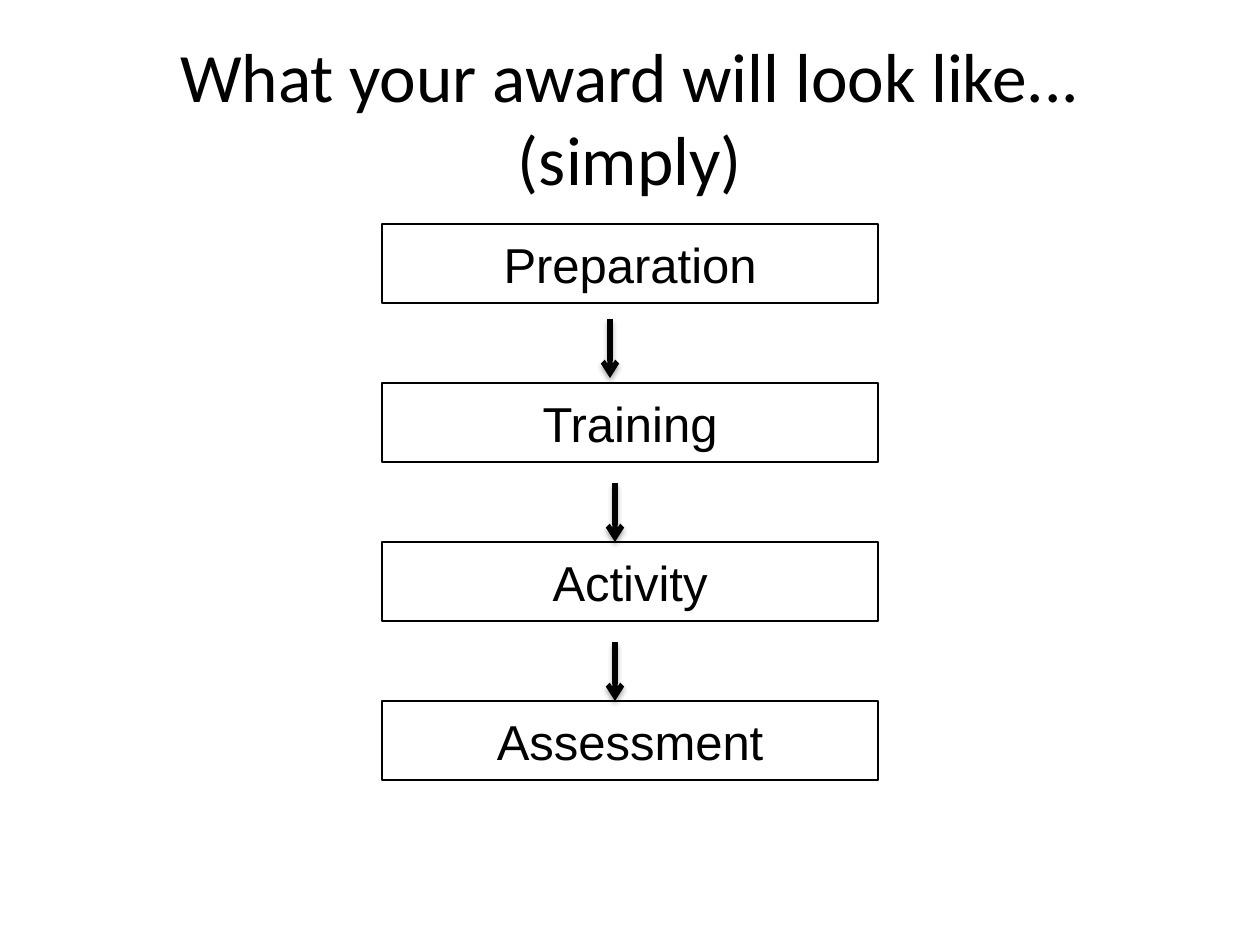
from lxml import etree
from pptx import Presentation
from pptx import util as u
from pptx.dml.color import RGBColor
from pptx.enum import shapes, text
from pptx.oxml import parse_xml
from pptx.oxml.ns import qn

PX = 914400 / 126
NS = "http://schemas.openxmlformats.org/drawingml/2006/main"
HUES = {"ink": "000000", "paper": "FFFFFF"}
SHADOW = f"""<a:effectLst xmlns:a="{NS}">
  <a:outerShdw blurRad="{u.Pt(3.1)}" dist="{u.Pt(1.8)}" dir="5400000" rotWithShape="0">
    <a:srgbClr val="{HUES['ink']}"><a:alpha val="35000"/></a:srgbClr>
  </a:outerShdw>
</a:effectLst>"""


def emu(*sizes):
    return [u.Emu(round(size * PX)) for size in sizes]


def write(shape, words, font, size):
    frame = shape.text_frame
    frame.word_wrap = True
    frame.vertical_anchor = text.MSO_ANCHOR.MIDDLE
    para = frame.paragraphs[0]
    para.text = words
    para.alignment = text.PP_ALIGN.CENTER
    para.font.name = font
    para.font.size = u.Pt(size)
    para.font.color.rgb = RGBColor.from_string(HUES["ink"])


prs = Presentation()
prs.slide_width, prs.slide_height = emu(1260, 945)
slide = prs.slides.add_slide(prs.slide_layouts[6])

title = slide.shapes.add_textbox(*emu(63, 38, 1134, 157))
write(title, "What your award will look like... (simply)", "Calibri", 39.6)

steps = ["Preparation", "Training", "Activity", "Assessment"]
for row, step in enumerate(steps):
    box = slide.shapes.add_shape(
        shapes.MSO_SHAPE.RECTANGLE, *emu(382, 224 + row * 159, 496, 79))
    box.shadow.inherit = False
    box.fill.solid()
    box.fill.fore_color.rgb = RGBColor.from_string(HUES["paper"])
    box.line.color.rgb = RGBColor.from_string(HUES["ink"])
    box.line.width = u.Pt(0.75)
    write(box, step, "Arial", 28)

for x, top in [(610, 319), (615, 483), (615, 642)]:
    arrow = slide.shapes.add_connector(
        shapes.MSO_CONNECTOR.STRAIGHT, *emu(x, top, x, top + 59))
    arrow.line.color.rgb = RGBColor.from_string(HUES["ink"])
    arrow.line.width = u.Pt(3)
    props = arrow.element.spPr
    etree.SubElement(props.find(qn("a:ln")), qn("a:tailEnd"), type="arrow")
    props.append(parse_xml(SHADOW))

prs.save("out.pptx")
